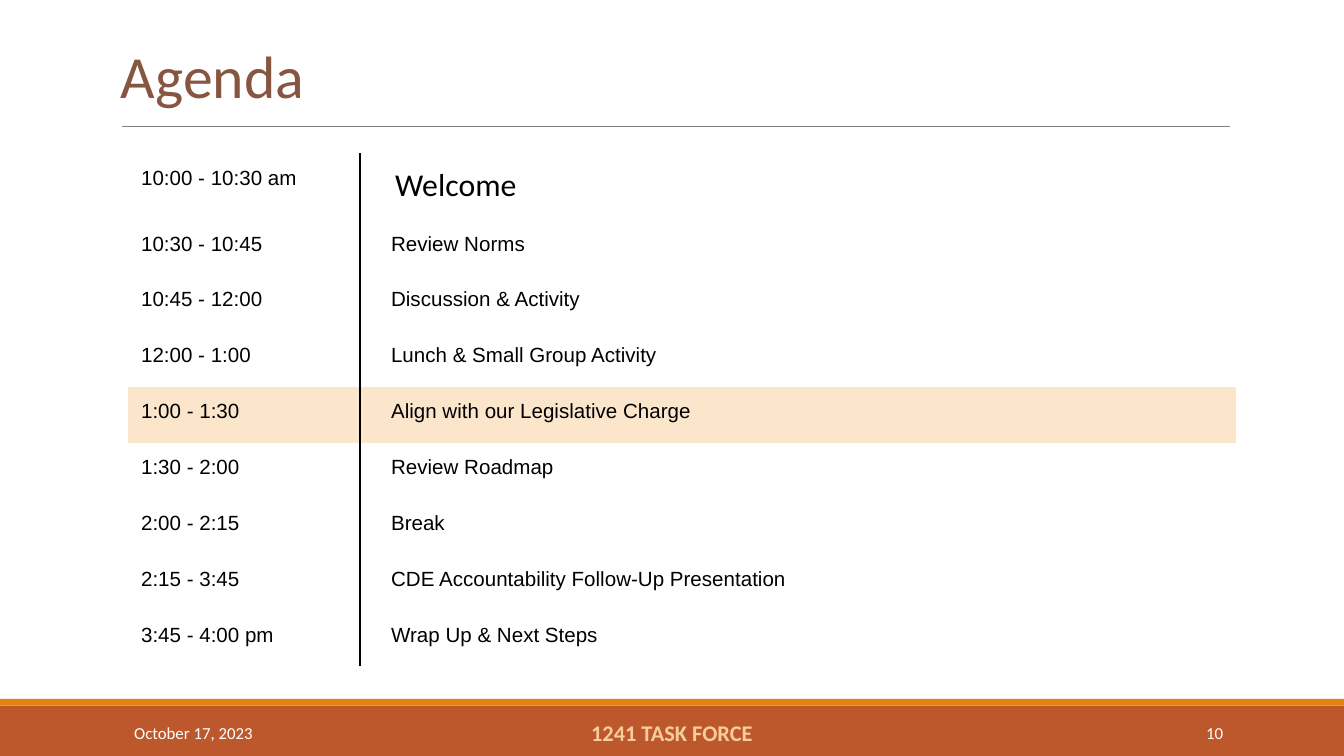
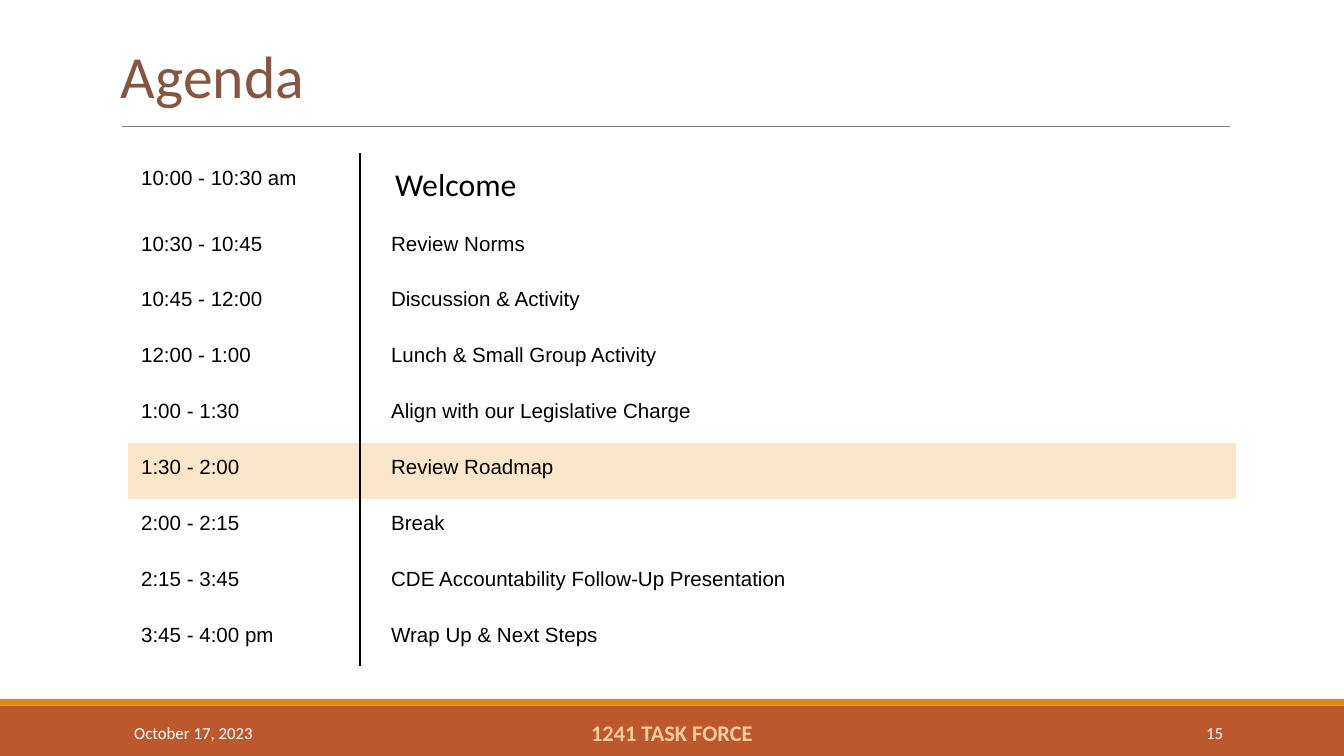
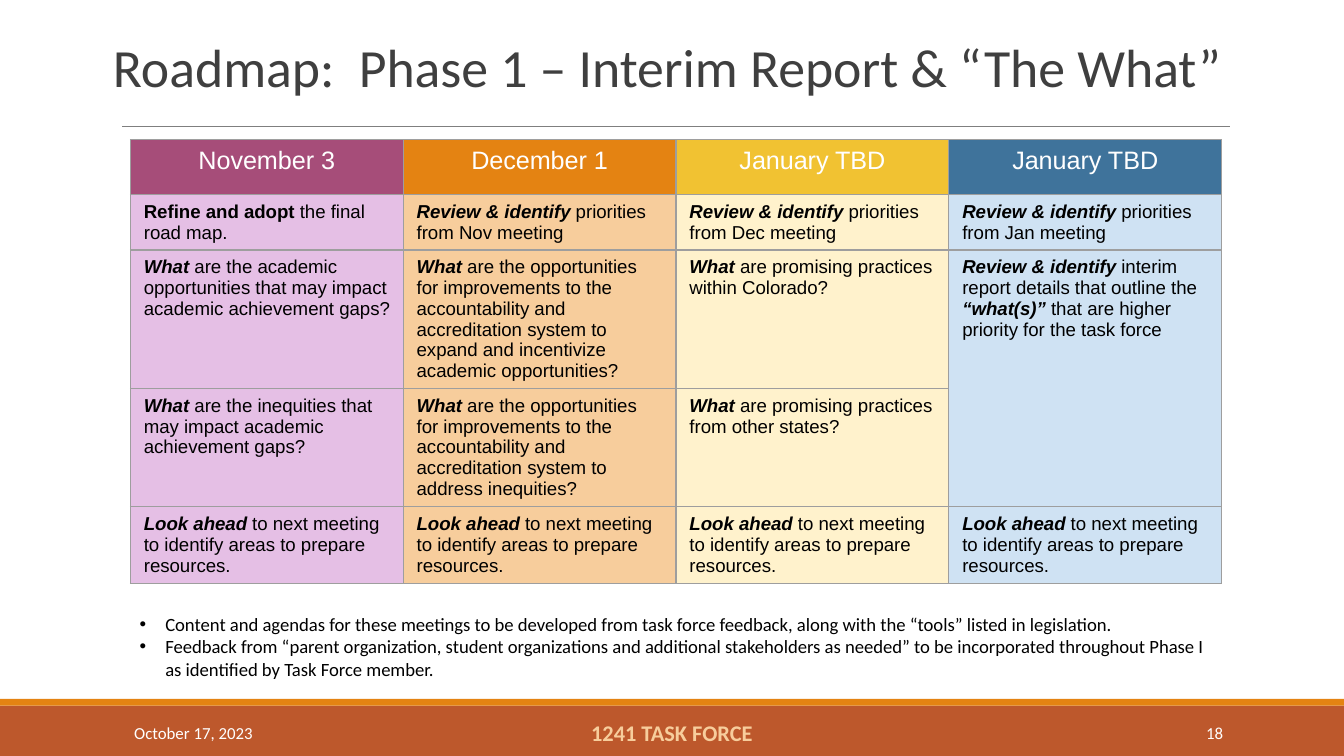
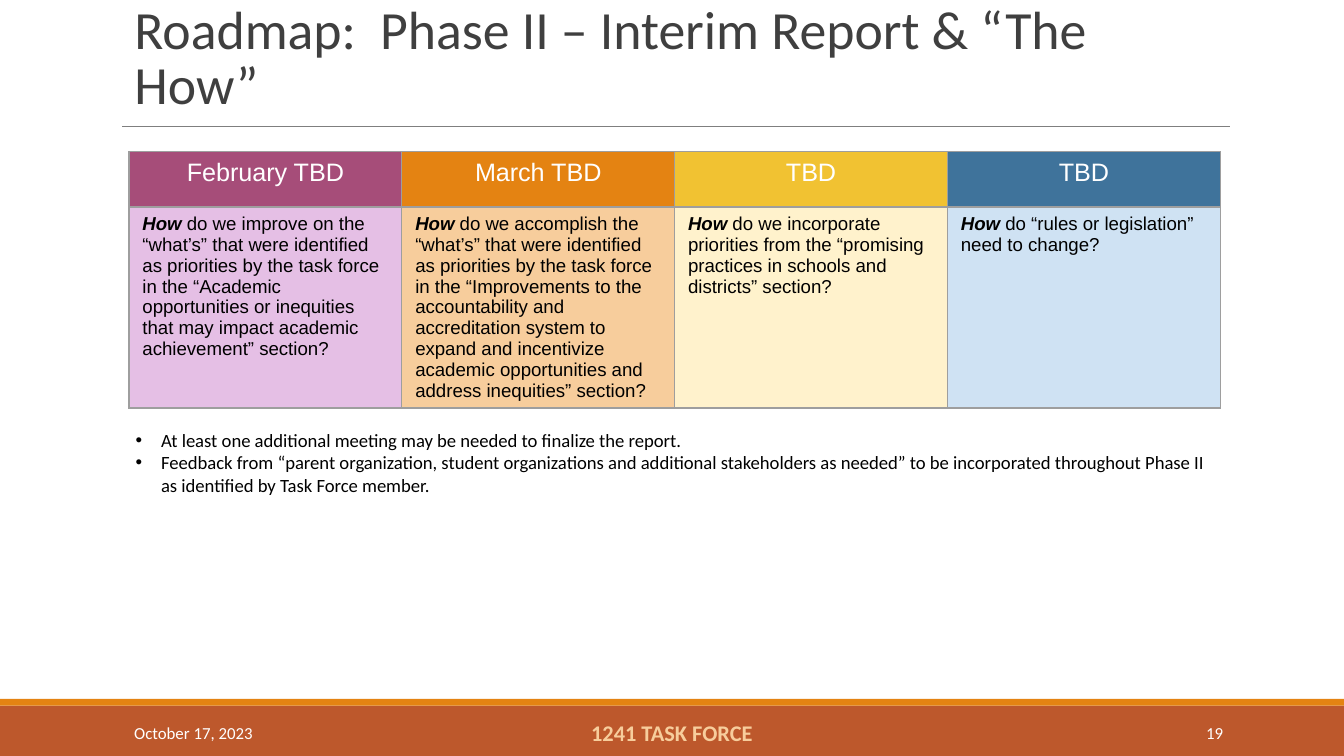
from lxml import etree
from pptx import Presentation
from pptx.dml.color import RGBColor
from pptx.enum.shapes import MSO_CONNECTOR, MSO_SHAPE
from pptx.enum.text import MSO_ANCHOR, MSO_AUTO_SIZE, PP_ALIGN
from pptx.oxml.ns import qn
from pptx.util import Pt

RECT, STRAIGHT = MSO_SHAPE.RECTANGLE, MSO_CONNECTOR.STRAIGHT
LEFT, CENTER, RIGHT = PP_ALIGN.LEFT, PP_ALIGN.CENTER, PP_ALIGN.RIGHT
TOP, MIDDLE, BOTTOM = MSO_ANCHOR.TOP, MSO_ANCHOR.MIDDLE, MSO_ANCHOR.BOTTOM
NO_FIT = MSO_AUTO_SIZE.NONE

PX = 9144
NO_STYLE = "{2D5ABB26-0587-4C30-8999-92F81FD0307C}"
TITLE_ONLY = 5
C = {
    "band": "BD582C", "orange": "E48312", "peach": "F7CD9C", "rule": "7F7F7F",
    "brown": "865640", "charcoal": "3F3F3F", "black": "000000",
    "white": "FFFFFF", "highlight": "FBE6CC", "grid": "9E9E9E",
    "plum": "A64D79", "gold": "F1C232", "blue": "3F739B",
    "purple": "990099", "cream": "FFF2CC", "sky": "CFE2F3",
}
HEAD_FILLS = ("plum", "orange", "gold", "blue")
BODY_FILLS = ("purple", "peach", "cream", "sky")

AGENDA = (
    ("10:00 - 10:30 am", "Welcome"),
    ("10:30 - 10:45", "Review Norms"),
    ("10:45 - 12:00", "Discussion & Activity"),
    ("12:00 - 1:00", "Lunch & Small Group Activity"),
    ("1:00 - 1:30", "Align with our Legislative Charge"),
    ("1:30 - 2:00", "Review Roadmap"),
    ("2:00 - 2:15", "Break"),
    ("2:15 - 3:45", "CDE Accountability Follow-Up Presentation"),
    ("3:45 - 4:00 pm", "Wrap Up & Next Steps"),
)

WHAT, HOW = ("What", "bi"), ("How", "bi")
REVIEW = ("Review & identify", "bi")
LOOK_AHEAD = [("Look ahead", "bi"),
              " to next meeting to identify areas to prepare resources."]
IMPROVE = (" are the opportunities for improvements to the accountability and "
           "accreditation system to ")
FEEDBACK = ("Feedback from “parent organization, student organizations and "
            "additional stakeholders as needed” to be incorporated throughout "
            "Phase {} as identified by Task Force member.")

PHASE_1 = (
    ("November 3", "December 1", "January TBD", "January TBD"),
    ([("Refine and adopt", "b"), " the final road map."],
     [REVIEW, " priorities from Nov meeting"],
     [REVIEW, " priorities from Dec meeting"],
     [REVIEW, " priorities from Jan meeting"]),
    ([WHAT, " are the academic opportunities that may impact academic "
            "achievement gaps?"],
     [WHAT, IMPROVE + "expand and incentivize academic opportunities?"],
     [WHAT, " are promising practices within Colorado?"],
     [REVIEW, " interim report details that outline the ",
      ("“what(s)”", "bi"), " that are higher priority for the task force"]),
    ([WHAT, " are the inequities that may impact academic achievement gaps?"],
     [WHAT, IMPROVE + "address inequities?"],
     [WHAT, " are promising practices from other states?"],
     None),
    (LOOK_AHEAD,) * 4,
)
PHASE_2 = (
    ("February TBD", "March TBD", "TBD", "TBD"),
    ([HOW, " do we improve on the “what’s” that were identified as priorities "
           "by the task force in the “Academic opportunities or inequities "
           "that may impact academic achievement” section?"],
     [HOW, " do we accomplish the “what’s” that were identified as priorities "
           "by the task force in the “Improvements to the accountability and "
           "accreditation system to expand and incentivize academic "
           "opportunities and address inequities” section?"],
     [HOW, " do we incorporate priorities from the “promising practices in "
           "schools and districts” section?"],
     [HOW, " do “rules or legislation” need to change?"]),
)


def rgb(name):
    """Return the named colour."""
    return RGBColor.from_string(C[name])


def pad(target, left, top, right=None, bottom=None):
    """Set the insets of a text frame or a table cell."""
    target.margin_left, target.margin_top = left * PX, top * PX
    target.margin_right = (left if right is None else right) * PX
    target.margin_bottom = (top if bottom is None else bottom) * PX


def write(tf, *paragraphs, size=10, color="black", font="Calibri", bold=False,
          align=LEFT, spacing=None, bullet=False):
    """Fill a text frame; a paragraph is a string or a list of runs."""
    for i, runs in enumerate(paragraphs):
        p = tf.add_paragraph() if i else tf.paragraphs[0]
        p.alignment = align
        if spacing:
            p.line_spacing = spacing
        if bullet:
            add_bullet(p)
        for run in [runs] if isinstance(runs, str) else runs:
            text, style = (run, "") if isinstance(run, str) else run
            r = p.add_run()
            r.text = text
            r.font.name, r.font.size = font, Pt(size)
            r.font.bold, r.font.italic = bold or "b" in style, "i" in style
            r.font.color.rgb = rgb(color)


def add_bullet(p):
    """Give a paragraph a hanging round bullet."""
    pPr = p._p.get_or_add_pPr()
    pPr.set("marL", str(19 * PX))
    pPr.set("indent", str(-19 * PX))
    color = etree.SubElement(pPr, qn("a:buClr"))
    etree.SubElement(color, qn("a:srgbClr"), val=C["black"])
    etree.SubElement(pPr, qn("a:buFont"), typeface="Arial")
    etree.SubElement(pPr, qn("a:buChar"), char="•")


def add_borders(cell, sides, color, width):
    """Draw the borders of a cell on the sides given, in LRTB order."""
    tcPr = cell._tc.get_or_add_tcPr()
    for side in sides:
        ln = etree.SubElement(tcPr, qn("a:ln" + side), w=str(Pt(width)))
        fill = etree.SubElement(ln, qn("a:solidFill"))
        etree.SubElement(fill, qn("a:srgbClr"), val=C[color])


def fill_cell(cell, color):
    """Fill a cell, letting purple show at a quarter of its strength."""
    cell.fill.solid()
    cell.fill.fore_color.rgb = rgb(color)
    if color == "purple":
        clr = cell._tc.tcPr.find(".//" + qn("a:srgbClr") + "[@val='990099']")
        etree.SubElement(clr, qn("a:alpha"), val="25000")


class Deck:
    """Hold the deck style and the current slide."""

    def __init__(self):
        """Start an empty deck."""
        self.prs = Presentation()
        self.prs.slide_width, self.prs.slide_height = 1000 * PX, 5625 * PX // 10
        self.s = None

    def slide(self, number):
        """Add a slide with its bands, rule and footer."""
        layout = self.prs.slide_layouts[TITLE_ONLY]
        self.s = self.prs.slides.add_slide(layout)
        self.band(525, 38, "band")
        self.band(520, 5, "orange")
        self.rule(91, 915, 94)
        self.text((90, 530, 203, 30), "October 17, 2023", size=9, color="white")
        self.text((302, 530, 396, 30), "1241 TASK FORCE", size=12,
                  color="peach", bold=True, align=CENTER)
        self.text((812, 530, 108, 30), str(number), size=9, color="white",
                  align=RIGHT)

    def band(self, top, height, color):
        """Add a full-width band."""
        sp = self.s.shapes.add_shape(RECT, 0, top * PX, 1000 * PX, height * PX)
        sp.shadow.inherit = False
        sp.fill.solid()
        sp.fill.fore_color.rgb = rgb(color)
        sp.line.fill.background()

    def rule(self, left, right, y):
        """Add the thin line below the title."""
        line = self.s.shapes.add_connector(STRAIGHT, left * PX, y * PX,
                                           right * PX, y * PX)
        line.line.color.rgb = rgb("rule")
        line.line.width = Pt(0.75)
        etree.SubElement(line._element.spPr, qn("a:effectLst"))

    def frame(self, sp, box, anchor, insets):
        """Place a text shape and return its prepared text frame."""
        sp.left, sp.top, sp.width, sp.height = (v * PX for v in box)
        tf = sp.text_frame
        tf.word_wrap, tf.auto_size = True, NO_FIT
        tf.vertical_anchor = anchor
        pad(tf, *insets)
        return tf

    def title(self, text, box, anchor=BOTTOM, insets=(10, 5), size=28.8,
              color="charcoal", spacing=0.85):
        """Place and format the title placeholder."""
        tf = self.frame(self.s.shapes.title, box, anchor, insets)
        write(tf, text, size=size, color=color, spacing=spacing)

    def text(self, box, *paragraphs, anchor=MIDDLE, insets=(10, 5), **fmt):
        """Add a text box."""
        sp = self.s.shapes.add_textbox(0, 0, PX, PX)
        write(self.frame(sp, box, anchor, insets), *paragraphs, **fmt)

    def table(self, left, top, widths, heights):
        """Add a table without a style, sized by column and row."""
        gf = self.s.shapes.add_table(len(heights), len(widths), left * PX,
                                     top * PX, sum(widths) * PX,
                                     round(sum(heights) * PX))
        table = gf.table
        table.first_row = table.horz_banding = False
        table._tbl.tblPr.find(qn("a:tableStyleId")).text = NO_STYLE
        for col, width in zip(table.columns, widths):
            col.width = width * PX
        for row, height in zip(table.rows, heights):
            row.height = round(height * PX)
        return table

    def agenda(self, number, current):
        """Add an agenda slide with the current row highlighted."""
        self.slide(number)
        self.title("Agenda", (90, 24, 825, 63), anchor=MIDDLE, insets=(0, 0),
                   size=32, color="brown", spacing=1.0)
        later = len(AGENDA) - 1
        table = self.table(95, 114, (173, 652), [49] + [333 / later] * later)
        for i, (time, topic) in enumerate(AGENDA):
            big = {"size": 17} if i == 0 else {"size": 11, "font": "Arial"}
            formats = ({"size": 11, "font": "Arial"}, big)
            indents = (10, 26 if i == 0 else 23)
            for j, text in enumerate((time, topic)):
                cell = table.cell(i, j)
                write(cell.text_frame, text, **formats[j])
                pad(cell, indents[j], 10, 10)
                add_borders(cell, "RL"[j], "black", 1)
                fill_cell(cell, "highlight" if i == current else "white")

    def roadmap(self, left, top, rows, heights):
        """Add a roadmap table with one colour per meeting."""
        table = self.table(left, top, [203] * len(HEAD_FILLS), heights)
        for i, row in enumerate(rows):
            fills = BODY_FILLS if i else HEAD_FILLS
            fmt = {} if i else {"size": 13.5, "color": "white", "align": CENTER}
            for j, runs in enumerate(row):
                cell = table.cell(i, j)
                pad(cell, 10, 5)
                add_borders(cell, "LRTB", "grid", 0.75)
                fill_cell(cell, fills[j])
                if runs is None:
                    table.cell(i - 1, j).merge(cell)
                else:
                    write(cell.text_frame, runs, font="Arial", **fmt)


def main():
    """Build the four slides and save them."""
    deck = Deck()
    deck.agenda(10, current=4)
    deck.agenda(15, current=5)

    deck.slide(18)
    deck.title("Roadmap:  Phase 1 – Interim Report & “The What”",
               (74, 9, 853, 69))
    deck.roadmap(97, 104, PHASE_1, (41, 41, 103, 88, 57))
    deck.text((97, 452, 813, 58),
              "Content and agendas for these meetings to be developed from task "
              "force feedback, along with the “tools” listed in legislation.",
              FEEDBACK.format("I"), anchor=TOP, insets=(7, 4), bullet=True)

    deck.slide(19)
    deck.title("Roadmap:  Phase II – Interim Report & “The How”",
               (90, 28, 825, 63))
    deck.roadmap(96, 113, PHASE_2, (41, 149))
    deck.text((91, 314, 818, 61),
              "At least one additional meeting may be needed to finalize the "
              "report.",
              FEEDBACK.format("II"), anchor=TOP, bullet=True)

    deck.prs.save("out.pptx")


if __name__ == "__main__":
    main()
